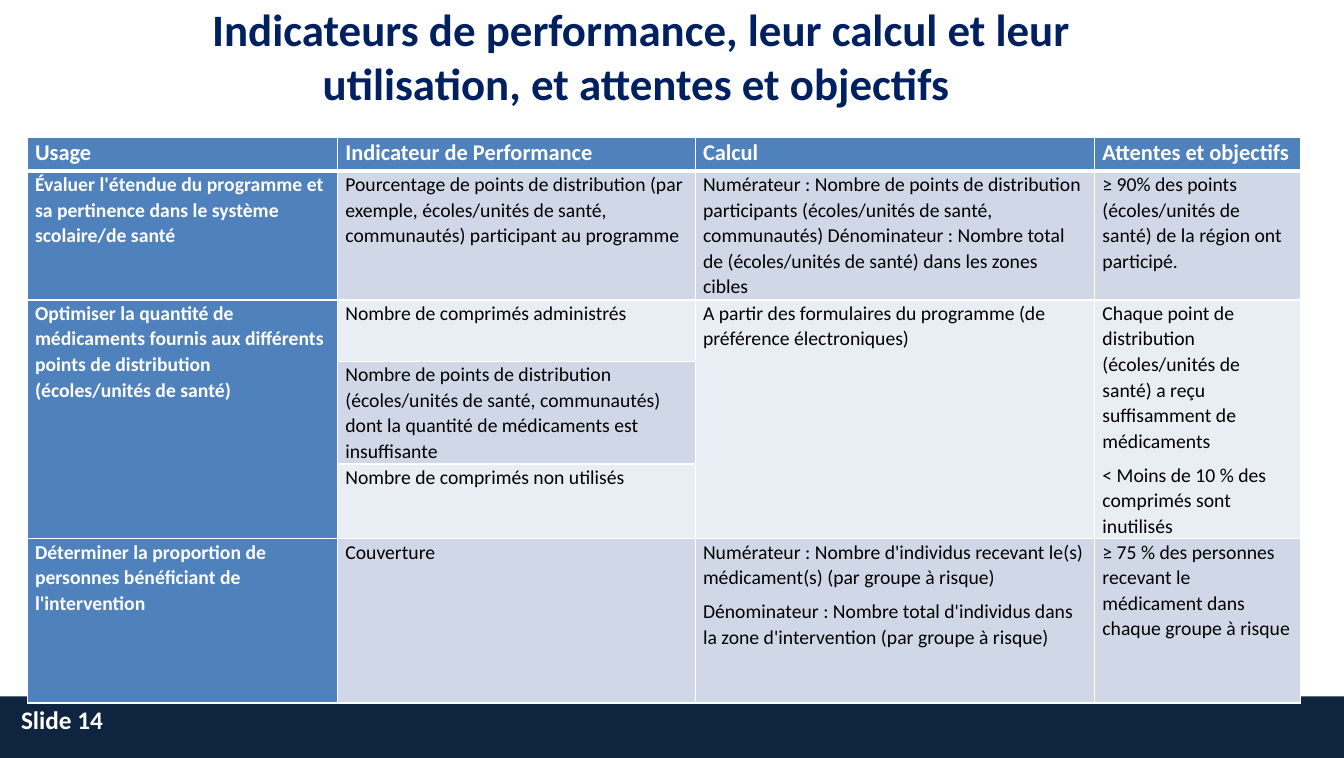
from lxml import etree
from pptx import Presentation
from pptx.dml.color import RGBColor
from pptx.enum.shapes import MSO_SHAPE
from pptx.enum.text import MSO_ANCHOR, PP_ALIGN
from pptx.oxml.ns import qn
from pptx.util import Cm, Pt

RECTANGLE = MSO_SHAPE.RECTANGLE
CENTER, LEFT = PP_ALIGN.CENTER, PP_ALIGN.LEFT
TOP, MIDDLE = MSO_ANCHOR.TOP, MSO_ANCHOR.MIDDLE

FONT = "Calibri"
WHITE, BLACK, NAVY, FOOTER = "FFFFFF", "000000", "002060", "0F243E"
BLUE, DARK_BAND, LIGHT_BAND = "4F81BD", "D0D8E8", "E9EDF4"

PAGE_WIDTH, PAGE_HEIGHT = 33.78, 19.05
FOOTER_TOP = 17.5
TABLE_LEFT, TABLE_TOP = 0.69, 3.45
COLUMN_WIDTHS = [7.8, 8.99, 10.04, 5.16]
ROW_HEIGHTS = [0.85, 3.24, 1.54, 2.58, 1.88, 4.13]

TITLE = ("Indicateurs de performance, leur calcul et leur utilisation, "
         "et attentes et objectifs ")
SLIDE_LABEL = "Slide 14"

# A line break separates paragraphs; None continues the cell above.
ROWS = [
    ["Usage", "Indicateur de Performance", "Calcul", "Attentes et objectifs"],
    ["Évaluer l'étendue du programme et sa pertinence dans le système scolaire/de santé",
     "Pourcentage de points de distribution (par exemple, écoles/unités de santé, "
     "communautés) participant au programme",
     "Numérateur : Nombre de points de distribution participants (écoles/unités de santé, "
     "communautés) Dénominateur : Nombre total de (écoles/unités de santé) dans les zones cibles",
     "≥ 90% des points (écoles/unités de santé) de la région ont participé."],
    ["Optimiser la quantité de médicaments fournis aux différents points de distribution "
     "(écoles/unités de santé)",
     "Nombre de comprimés administrés",
     "A partir des formulaires du programme (de préférence électroniques)",
     "Chaque point de distribution (écoles/unités de santé) a reçu suffisamment de médicaments\n"
     "< Moins de 10 % des comprimés sont inutilisés"],
    [None,
     "Nombre de points de distribution (écoles/unités de santé, communautés) dont la quantité "
     "de médicaments est insuffisante",
     None, None],
    [None, "Nombre de comprimés non utilisés", None, None],
    ["Déterminer la proportion de personnes bénéficiant de l'intervention",
     "Couverture",
     "Numérateur : Nombre d'individus recevant le(s) médicament(s) (par groupe à risque)\n"
     "Dénominateur : Nombre total d'individus dans la zone d'intervention (par groupe à risque)",
     "≥ 75 % des personnes recevant le médicament dans chaque groupe à risque"],
]


def rgb(color):
    return RGBColor.from_string(color)


def paint(target, color):
    target.fill.solid()
    target.fill.fore_color.rgb = rgb(color)


def style(para, size, color, bold):
    font = para.font
    font.name, font.size, font.bold = FONT, Pt(size), bold
    font.color.rgb = rgb(color)


def add_text(page, text, left, top, width, height, size, color, align, anchor):
    box = page.shapes.add_textbox(Cm(left), Cm(top), Cm(width), Cm(height))
    frame = box.text_frame
    frame.word_wrap = True
    frame.vertical_anchor = anchor
    frame.text = text
    para = frame.paragraphs[0]
    para.alignment = align
    style(para, size, color, True)


def add_borders(cell, bottom):
    """Draw white cell edges; bottom is the lower edge width in points."""
    properties = cell._tc.get_or_add_tcPr()
    for side, width in (("L", 1), ("R", 1), ("T", 1), ("B", bottom)):
        line = etree.SubElement(properties, qn("a:ln" + side), w=str(Pt(width)))
        fill = etree.SubElement(line, qn("a:solidFill"))
        etree.SubElement(fill, qn("a:srgbClr"), val=WHITE)


def fill_cell(cell, text, row, column):
    header = row == 0
    strong = header or column == 0
    add_borders(cell, 3 if header else 1)
    paint(cell, BLUE if strong else DARK_BAND if row % 2 else LIGHT_BAND)
    cell.margin_left = cell.margin_right = Cm(0.19)
    cell.margin_top = cell.margin_bottom = 0
    if text is None:
        return
    cell.text = text
    for para in cell.text_frame.paragraphs:
        para.line_spacing = 1.07
        para.space_after = Pt(6)
        style(para, 16 if header else 14, WHITE if strong else BLACK, strong)


def add_indicator_table(page):
    table = page.shapes.add_table(
        len(ROWS), len(COLUMN_WIDTHS), Cm(TABLE_LEFT), Cm(TABLE_TOP),
        Cm(sum(COLUMN_WIDTHS)), Cm(sum(ROW_HEIGHTS))).table
    for column, width in zip(table.columns, COLUMN_WIDTHS):
        column.width = Cm(width)
    for row, height in zip(table.rows, ROW_HEIGHTS):
        row.height = Cm(height)
    for r, texts in enumerate(ROWS):
        for c, text in enumerate(texts):
            fill_cell(table.cell(r, c), text, r, c)
    for c in range(len(COLUMN_WIDTHS)):
        continued = [r for r, texts in enumerate(ROWS) if texts[c] is None]
        if continued:
            table.cell(continued[0] - 1, c).merge(table.cell(continued[-1], c))


def main():
    deck = Presentation()
    deck.slide_width, deck.slide_height = Cm(PAGE_WIDTH), Cm(PAGE_HEIGHT)
    page = deck.slides.add_slide(deck.slide_layouts[6])

    add_text(page, TITLE, 4.22, 0, 23.8, 2.8, 32, NAVY, CENTER, MIDDLE)
    footer = page.shapes.add_shape(
        RECTANGLE, 0, Cm(FOOTER_TOP), Cm(PAGE_WIDTH), Cm(PAGE_HEIGHT - FOOTER_TOP))
    footer.shadow.inherit = False
    paint(footer, FOOTER)
    footer.line.fill.background()
    add_text(page, SLIDE_LABEL, 0.28, 17.58, 7.87, 1.02, 18, WHITE, LEFT, TOP)
    add_indicator_table(page)
    deck.save("out.pptx")


if __name__ == "__main__":
    main()
